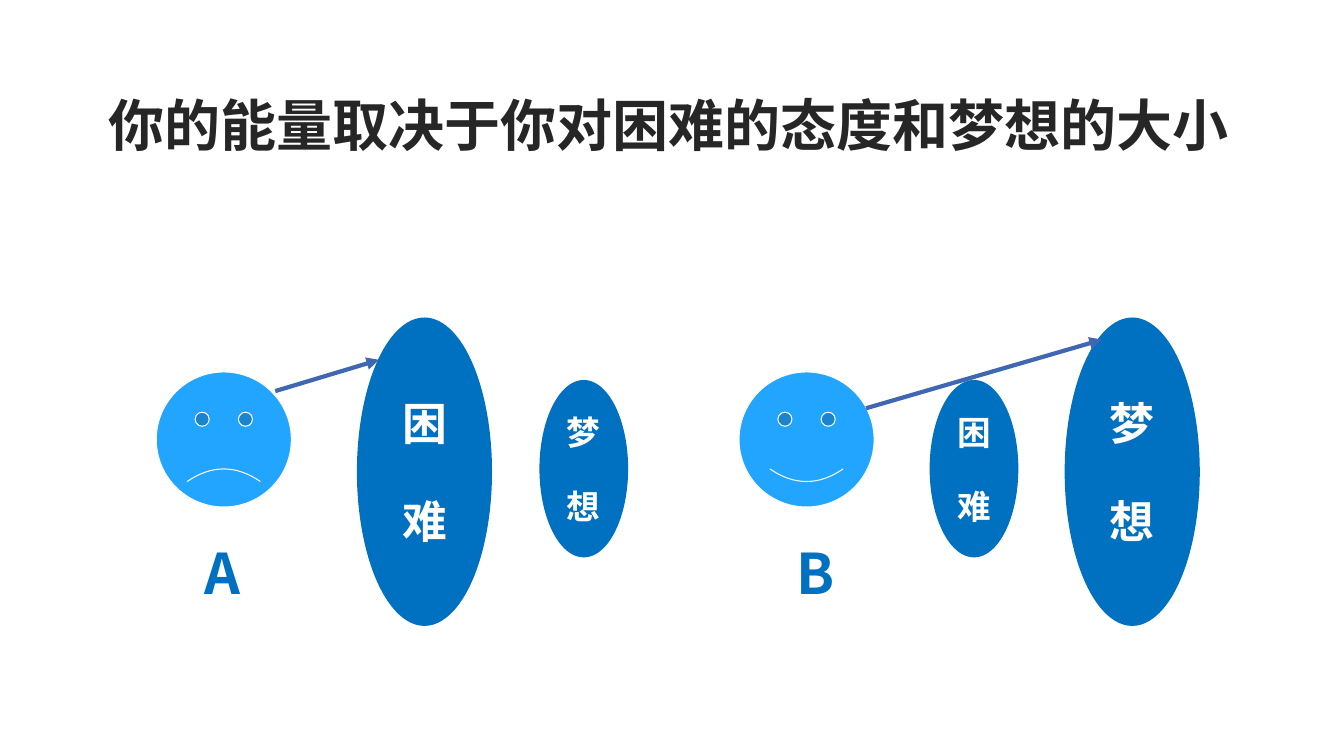
"""Build a slide comparing two attitudes to difficulty and dreams."""
from lxml.etree import SubElement
from pptx import Presentation
from pptx.dml.color import RGBColor
from pptx.enum.shapes import MSO_CONNECTOR, MSO_SHAPE
from pptx.enum.text import MSO_ANCHOR, PP_ALIGN
from pptx.oxml.ns import qn
from pptx.util import Inches, Pt

DARK = RGBColor(0x26, 0x26, 0x26)
WHITE = RGBColor(0xFF, 0xFF, 0xFF)
SKY = RGBColor(0x21, 0xA5, 0xFF)
BLUE = RGBColor(0x00, 0x70, 0xC0)
ARROW = RGBColor(0x40, 0x67, 0xB2)
CHINESE_FONT = "Noto Sans CJK SC"


def style_text(paragraph, size, color, latin=CHINESE_FONT):
    font = paragraph.font
    font.name, font.size, font.bold = latin, Pt(size), True
    font.color.rgb = color
    properties = paragraph._p.pPr.find(qn("a:defRPr"))
    SubElement(properties, qn("a:ea")).set("typeface", CHINESE_FONT)


def add_plain_shape(kind, left, top, width, height, fill):
    shape = page.shapes.add_shape(
        kind, Inches(left), Inches(top), Inches(width), Inches(height))
    shape.shadow.inherit = False
    shape.fill.solid()
    shape.fill.fore_color.rgb = fill
    shape.line.fill.background()
    return shape


deck = Presentation()
deck.slide_width, deck.slide_height = Inches(13.33), Inches(7.5)
page = deck.slides.add_slide(deck.slide_layouts[5])

title = page.shapes.title
title.left, title.top = Inches(0.43), Inches(0.92)
title.width, title.height = Inches(12.4), Inches(1.45)
title.text_frame.text = "你的能量取决于你对困难的态度和梦想的大小"
title.text_frame.vertical_anchor = MSO_ANCHOR.TOP
heading = title.text_frame.paragraphs[0]
heading.alignment = PP_ALIGN.CENTER
heading.line_spacing = 0.9
style_text(heading, 40, DARK, "Calibri")

for left, smile in [(1.55, -0.047), (7.33, 0.047)]:
    face = add_plain_shape(MSO_SHAPE.SMILEY_FACE, left, 3.69, 1.34, 1.34, SKY)
    face.adjustments[0] = smile
    face.line.color.rgb = WHITE
    face.line.width = Pt(0.75)

LARGE = (3.15, 1.34, 3.06, 32)
SMALL = (3.77, 0.88, 1.76, 24)
for word, left, (top, width, height, size) in [
    ("困难", 3.54, LARGE),
    ("梦想", 5.35, SMALL),
    ("困难", 9.22, SMALL),
    ("梦想", 10.56, LARGE),
]:
    oval = add_plain_shape(MSO_SHAPE.OVAL, left, top, width, height, BLUE)
    frame = oval.text_frame
    frame.word_wrap = False
    frame.vertical_anchor = MSO_ANCHOR.MIDDLE
    frame.text = "\n".join(word)
    for paragraph in frame.paragraphs:
        paragraph.alignment = PP_ALIGN.CENTER
        style_text(paragraph, size, WHITE)
    frame.paragraphs[1].space_before = Pt(size)

for start_x, start_y, end_x, end_y in [
    (2.73, 3.88, 3.76, 3.57),
    (8.59, 4.05, 10.93, 3.37),
]:
    arrow = page.shapes.add_connector(
        MSO_CONNECTOR.STRAIGHT,
        Inches(start_x), Inches(start_y), Inches(end_x), Inches(end_y))
    arrow.line.color.rgb = ARROW
    arrow.line.width = Pt(3)
    SubElement(arrow.line._get_or_add_ln(), qn("a:tailEnd")).set("type", "triangle")
    SubElement(arrow._element.spPr, qn("a:effectLst"))

for letter, left in [("A", 1.93), ("B", 7.8)]:
    box = page.shapes.add_textbox(
        Inches(left), Inches(5.29), Inches(0.65), Inches(0.77))
    box.text_frame.word_wrap = True
    box.text_frame.text = letter
    style_text(box.text_frame.paragraphs[0], 40, BLUE)

deck.save("out.pptx")
